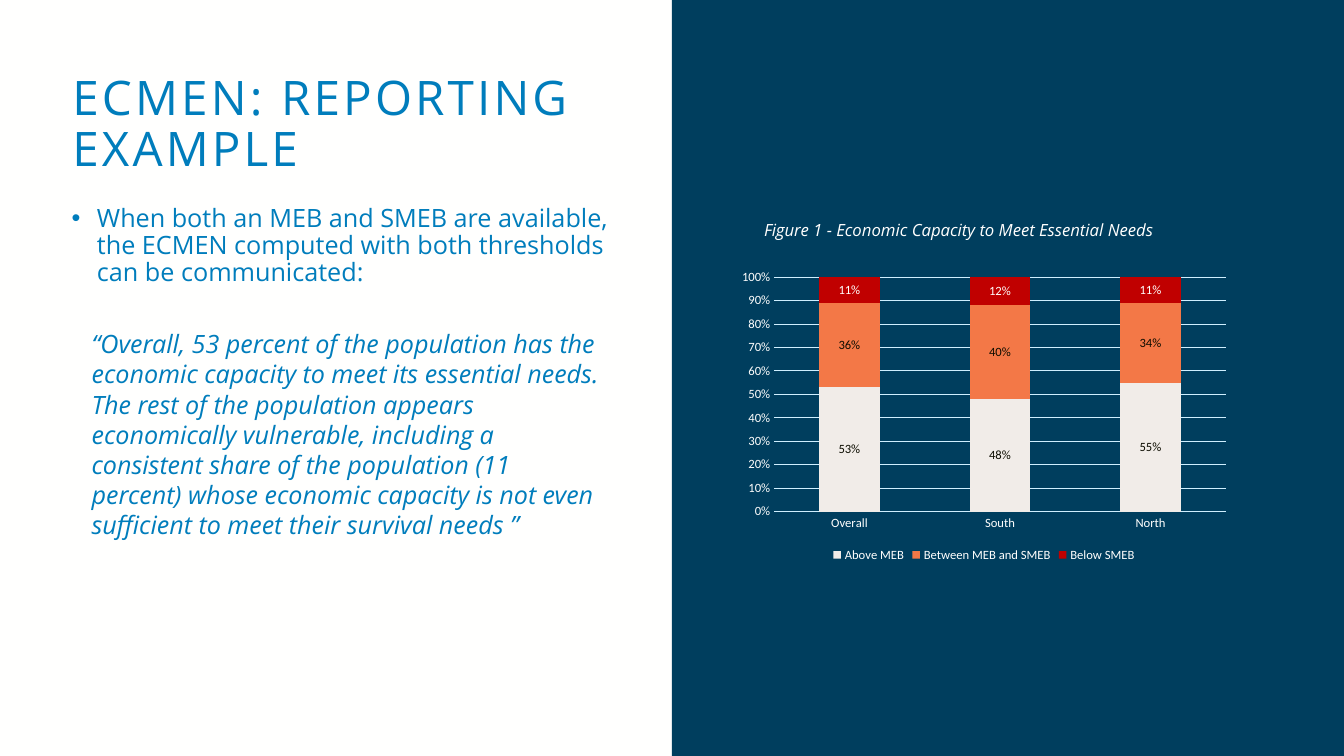
from pptx import Presentation
from pptx.chart.data import CategoryChartData
from pptx.dml.color import RGBColor
from pptx.enum.chart import XL_CHART_TYPE, XL_LEGEND_POSITION, XL_TICK_MARK
from pptx.enum.shapes import MSO_SHAPE
from pptx.enum.text import MSO_ANCHOR, MSO_AUTO_SIZE, PP_ALIGN
from pptx.util import Cm, Pt

COLORS = {
    "paper": "FFFFFE", "navy": "003E5E", "blue": "007DBC", "grid": "CFEFFF",
    "ink": "0C0C00", "sand": "F1ECE8", "orange": "F37847", "red": "C00000",
}
WIDTH, HEIGHT = 33.87, 19.05
REGIONS = ["Overall", "South", "North"]
SERIES = [
    ("Above MEB", [0.53, 0.48, 0.55], "sand", "ink"),
    ("Between MEB and SMEB", [0.36, 0.40, 0.34], "orange", "ink"),
    ("Below SMEB", [0.11, 0.12, 0.11], "red", "paper"),
]
TITLE = "ECMEN: REPORTING EXAMPLE"
POINT = ("When both an MEB and SMEB are available, the ECMEN computed with "
         "both thresholds can be communicated:")
QUOTE = ("“Overall, 53 percent of the population has the economic capacity to "
         "meet its essential needs. The rest of the population appears "
         "economically vulnerable, including a consistent share of the "
         "population (11 percent) whose economic capacity is not even "
         "sufficient to meet their survival needs ”")
CAPTION = "Figure 1 - Economic Capacity to Meet Essential Needs"


def rgb(name):
    return RGBColor.from_string(COLORS[name])


def place(sp, x, y, w, h):
    sp.left, sp.top, sp.width, sp.height = Cm(x), Cm(y), Cm(w), Cm(h)


def style(font, name, size, color, italic=False):
    font.name, font.size, font.italic = name, Pt(size), italic
    font.color.rgb = rgb(color)


def write(sp, text, size, color, spacing, italic=False):
    """Fill a shape with one left-aligned, top-anchored paragraph."""
    tf = sp.text_frame
    tf.word_wrap = True
    tf.auto_size = MSO_AUTO_SIZE.NONE
    tf.vertical_anchor = MSO_ANCHOR.TOP
    p = tf.paragraphs[0]
    p.alignment = PP_ALIGN.LEFT
    p.line_spacing = spacing
    p.space_before = Pt(0)
    r = p.add_run()
    r.text = text
    style(r.font, "Open Sans", size, color, italic)
    return p, r


def add_block(s, x, y, w, h):
    sp = s.shapes.add_shape(MSO_SHAPE.RECTANGLE, Cm(x), Cm(y), Cm(w), Cm(h))
    sp.shadow.inherit = False
    sp.fill.solid()
    sp.fill.fore_color.rgb = rgb("navy")
    sp.line.fill.background()
    return sp


def text_panel(s, x, y):
    title, body = s.shapes.title, s.placeholders[1]
    place(title, x + 1.57, y + 1.75, 14.88, 1.83)
    p, r = write(title, TITLE, 34, "blue", 0.9)
    r._r.get_or_add_rPr().set("spc", "230")

    place(body, x + 1.55, y + 5.05, 14.94, 10.85)
    p, r = write(body, POINT, 18, "blue", 0.9)
    pPr = p._p.get_or_add_pPr()
    pPr.set("marL", str(Cm(0.64)))
    pPr.set("indent", str(-Cm(0.64)))

    quote = s.shapes.add_textbox(Cm(x + 2.06), Cm(y + 8.15), Cm(13.44), Cm(5.64))
    write(quote, QUOTE, 18, "blue", 1.0, italic=True)


def chart_panel(s, x, y, w, h):
    add_block(s, x, y, w, h)
    caption = add_block(s, x + 2.07, y + 5.33, 12.62, 1.45)
    p, r = write(caption, CAPTION, 12, "paper", 1.15, italic=True)
    p.space_after = Pt(10)
    add_capacity_chart(s, x + 1.51, y + 6.65, 12.7, 7.62)


def add_capacity_chart(s, x, y, w, h):
    data = CategoryChartData(number_format="0%")
    data.categories = REGIONS
    for name, values, fill, label in SERIES:
        data.add_series(name, values)
    chart = s.shapes.add_chart(XL_CHART_TYPE.COLUMN_STACKED_100, Cm(x), Cm(y),
                               Cm(w), Cm(h), data).chart
    style(chart.font, "Calibri", 10, "paper")
    chart.has_title = False
    chart.has_legend = True
    chart.legend.position = XL_LEGEND_POSITION.BOTTOM
    chart.legend.include_in_layout = False
    style(chart.legend.font, "Calibri", 9, "paper")

    cat, val = chart.category_axis, chart.value_axis
    for axis in (cat, val):
        axis.major_tick_mark = axis.minor_tick_mark = XL_TICK_MARK.NONE
        style(axis.tick_labels.font, "Calibri", 9, "paper")
    val.minimum_scale, val.maximum_scale, val.major_unit = 0, 1, 0.1
    val.tick_labels.number_format = "0%"
    val.tick_labels.number_format_is_linked = False
    val.format.line.fill.background()
    val.has_major_gridlines = True
    for line in (cat.format.line, val.major_gridlines.format.line):
        line.color.rgb = rgb("grid")
        line.width = Pt(0.75)

    plot = chart.plots[0]
    plot.gap_width, plot.overlap = 150, 100
    plot.vary_by_categories = False
    for series, (name, values, fill, label) in zip(plot.series, SERIES):
        series.format.fill.solid()
        series.format.fill.fore_color.rgb = rgb(fill)
        labels = series.data_labels
        labels.show_value = True
        labels.number_format = "0%"
        labels.number_format_is_linked = False
        style(labels.font, "Calibri", 9, label)


def main():
    prs = Presentation()
    prs.slide_width, prs.slide_height = Cm(WIDTH), Cm(HEIGHT)
    s = prs.slides.add_slide(prs.slide_layouts[1])
    s.background.fill.solid()
    s.background.fill.fore_color.rgb = rgb("paper")
    text_panel(s, 0, 0)
    chart_panel(s, WIDTH / 2, 0, WIDTH / 2, HEIGHT)
    prs.save("out.pptx")


if __name__ == "__main__":
    main()
